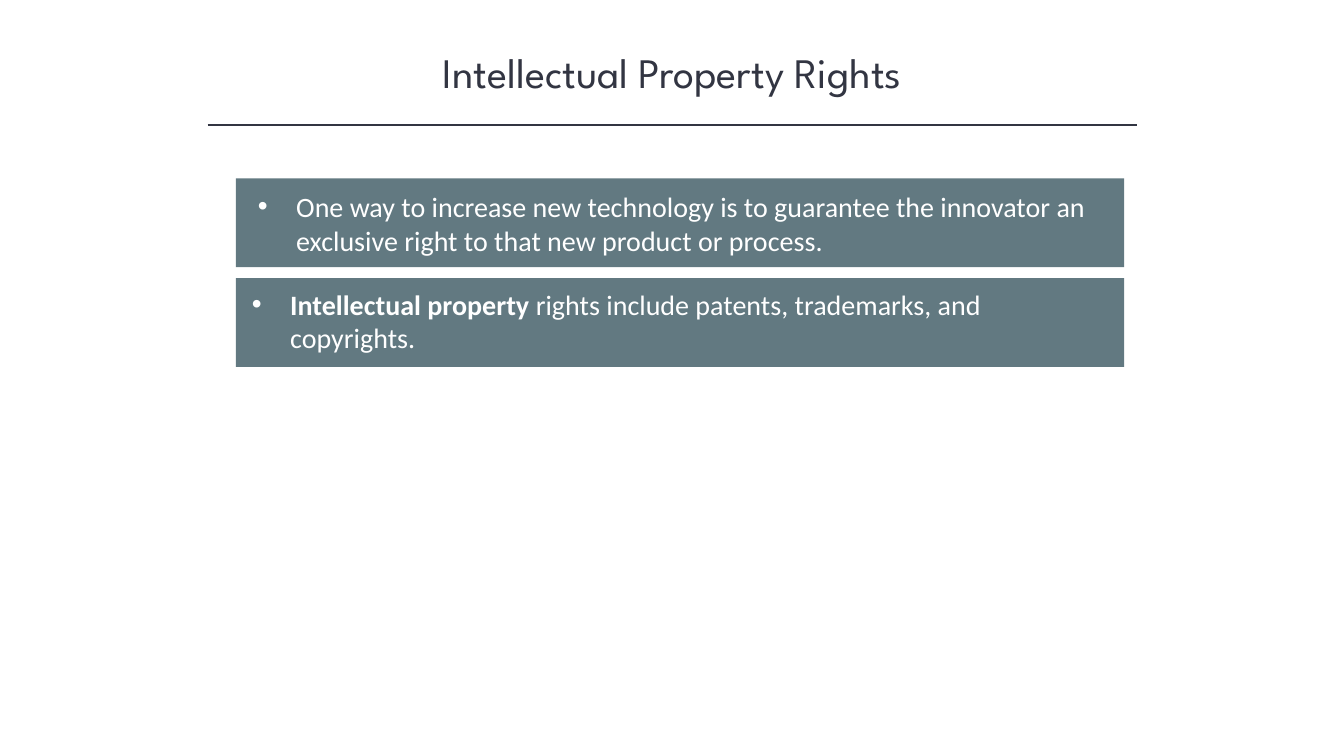
"""Build the slide on intellectual property rights."""
from lxml.etree import SubElement
from pptx import Presentation
from pptx.dml.color import RGBColor
from pptx.enum.shapes import MSO_CONNECTOR, MSO_SHAPE
from pptx.enum.text import MSO_ANCHOR, MSO_AUTO_SIZE, PP_ALIGN
from pptx.oxml.ns import qn
from pptx.util import Inches, Pt

COLORS = {"ink": "323542", "panel": "627981", "text": "FFFFFF"}


def add_span(para, text, *, font, size, color, bold=False):
    span = para.add_run()
    span.text = text
    span.font.name = font
    span.font.size = Pt(size)
    span.font.bold = bold
    span.font.color.rgb = RGBColor.from_string(COLORS[color])


def add_panel(group, left, top, width, height):
    panel = group.shapes.add_shape(
        MSO_SHAPE.RECTANGLE, Inches(left), Inches(top), Inches(width), Inches(height)
    )
    panel.shadow.inherit = False
    panel.fill.solid()
    panel.fill.fore_color.rgb = RGBColor.from_string(COLORS["panel"])
    panel.line.fill.background()
    return panel


deck = Presentation()
deck.slide_width = Inches(13.33)
deck.slide_height = Inches(7.5)
page = deck.slides.add_slide(deck.slide_layouts[5])

title = page.shapes.title
title.left, title.top = Inches(1.67), Inches(0.41)
title.width, title.height = Inches(10), Inches(0.61)
title.text_frame.vertical_anchor = MSO_ANCHOR.MIDDLE
title.text_frame.auto_size = MSO_AUTO_SIZE.NONE
title_para = title.text_frame.paragraphs[0]
title_para.alignment = PP_ALIGN.CENTER
add_span(title_para, "Intellectual Property Rights", font="League Spartan", size=30, color="ink")

rule = page.shapes.add_connector(
    MSO_CONNECTOR.STRAIGHT, Inches(2.06), Inches(1.24), Inches(11.28), Inches(1.24)
)
rule.line.color.rgb = RGBColor.from_string(COLORS["ink"])
rule.line.width = Pt(1)
SubElement(rule._element.spPr, qn("a:effectLst"))

points = [
    (1.77, 2.46, 1.83, [
        ("One way to increase new technology is to guarantee the innovator an "
         "exclusive right to that new product or process.", False),
    ]),
    (2.76, 2.4, 2.8, [
        ("Intellectual property ", True),
        ("rights include patents, trademarks, and copyrights.", False),
    ]),
]

for panel_top, text_left, text_top, spans in points:
    group = page.shapes.add_group_shape()
    add_panel(group, 2.34, panel_top, 8.81, 0.88)
    box = add_panel(group, text_left, text_top, 8.54, 0.77)
    frame = box.text_frame
    frame.word_wrap = True
    frame.vertical_anchor = MSO_ANCHOR.TOP
    para = frame.paragraphs[0]
    para.alignment = PP_ALIGN.LEFT
    properties = para._p.get_or_add_pPr()
    properties.set("marL", str(Inches(0.38)))
    properties.set("indent", str(-Inches(0.38)))
    SubElement(properties, qn("a:buFont"), typeface="Arial")
    SubElement(properties, qn("a:buChar"), char="•")
    for text, bold in spans:
        add_span(para, text, font="Calibri", size=20, color="text", bold=bold)

deck.save("out.pptx")
